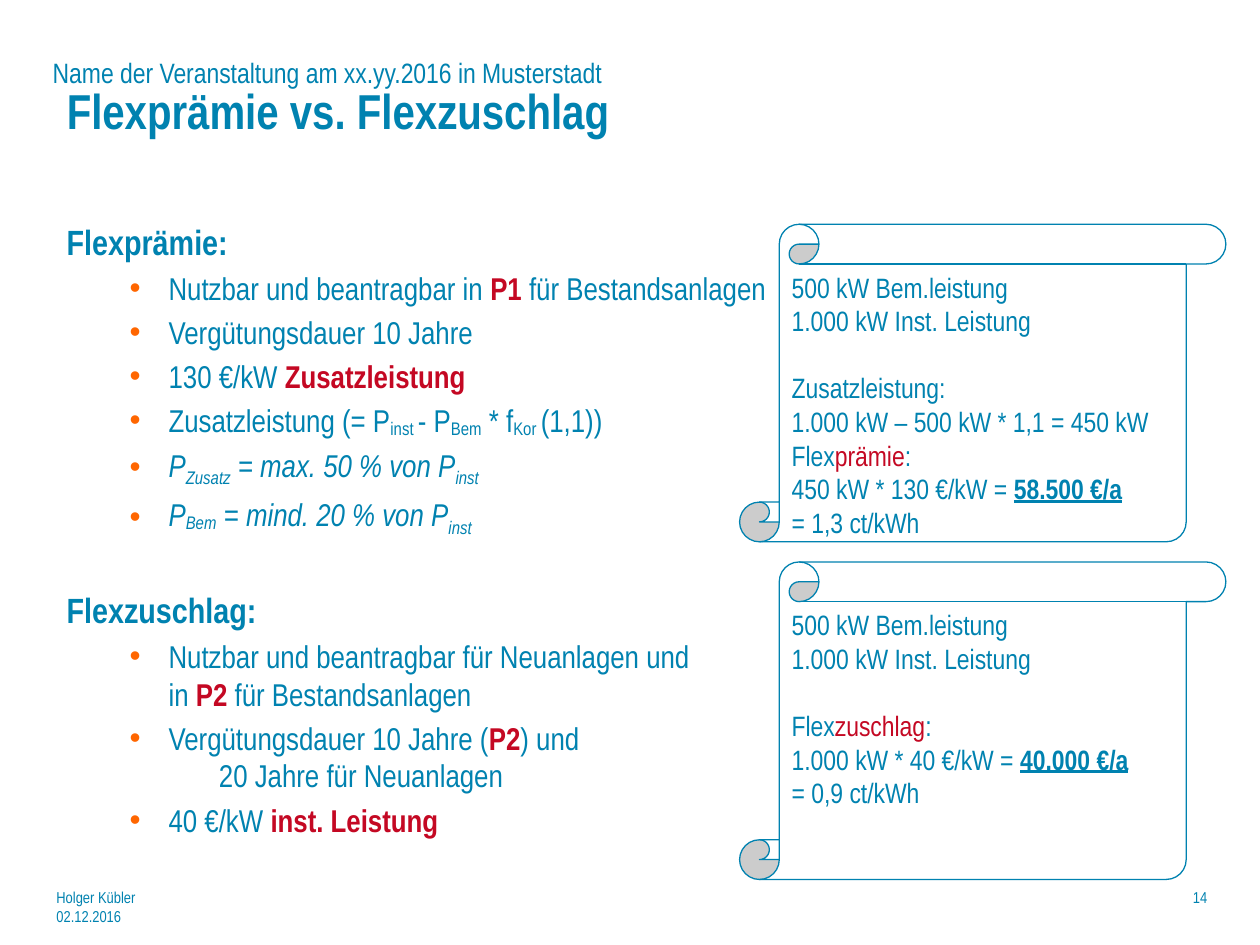
from dataclasses import dataclass

import pptx
import pptx.dml.color
import pptx.enum.shapes
import pptx.enum.text
import pptx.oxml
import pptx.oxml.ns
import pptx.util

BLUE = pptx.dml.color.RGBColor(0x00, 0x82, 0xB0)
RED = pptx.dml.color.RGBColor(0xC4, 0x08, 0x23)
ORANGE = pptx.dml.color.RGBColor(0xFF, 0x66, 0x00)
WHITE = pptx.dml.color.RGBColor(0xFF, 0xFF, 0xFF)
FONT = "Arial Narrow"
CELL = pptx.util.Inches(0.1)  # the slide is a grid of 100 columns by 75 rows
ANCHOR = pptx.enum.text.MSO_ANCHOR
ALIGN = pptx.enum.text.PP_ALIGN


@dataclass(frozen=True)
class Area:
    column: float
    row: float
    columns: float
    rows: float

    def lengths(self) -> list[int]:
        return [round(cells * CELL) for cells in (self.column, self.row, self.columns, self.rows)]


@dataclass(frozen=True)
class Run:
    text: str
    color: pptx.dml.color.RGBColor = BLUE
    bold: bool = False
    italic: bool = False
    underline: bool = False
    baseline: int = 0


@dataclass(frozen=True)
class Para:
    runs: tuple[Run, ...]
    size: float
    before: float = 0
    margin: float = 0
    bullet: bool = False


def red(text: str) -> Run:
    return Run(text, RED, bold=True)


def heading(text: str, before: float = 0) -> Para:
    return Para((Run(text, bold=True),), 20, before)


def item(*runs: Run) -> Para:
    return Para(runs, 18, 3.6, 8.1, bullet=True)


def scroll_line(*runs: Run, before: float = 0) -> Para:
    return Para(runs, 16, before)


def power(name: str, offset: int, share: str) -> Para:
    return item(Run("P", italic=True), Run(name, italic=True, baseline=offset),
                Run(f" = {share} % von P", italic=True), Run("inst", italic=True, baseline=-25))


def add_bullet(properties) -> None:
    properties.set("indent", str(round(-3.1 * CELL)))
    namespace = pptx.oxml.ns.nsdecls("a")
    for xml in (f'<a:buClr {namespace}><a:srgbClr val="{ORANGE}"/></a:buClr>',
                f'<a:buFont {namespace} typeface="Arial"/>',
                f'<a:buChar {namespace} char="•"/>'):
        properties.append(pptx.oxml.parse_xml(xml))


def add_run(paragraph, run: Run, size: float) -> None:
    for number, line in enumerate(run.text.split("\n")):
        if number:
            paragraph.add_line_break()
        piece = paragraph.add_run()
        piece.text = line
        font = piece.font
        font.name, font.size = FONT, pptx.util.Pt(size)
        font.bold, font.italic, font.underline = run.bold, run.italic, run.underline
        font.color.rgb = run.color
        if run.baseline:
            piece._r.get_or_add_rPr().set("baseline", str(run.baseline * 1000))


def write(shape, paras: list[Para], anchor=ANCHOR.TOP, align=ALIGN.LEFT) -> None:
    frame = shape.text_frame
    frame.word_wrap = True
    frame.auto_size = pptx.enum.text.MSO_AUTO_SIZE.NONE
    frame.vertical_anchor = anchor
    for number, para in enumerate(paras):
        paragraph = frame.add_paragraph() if number else frame.paragraphs[0]
        paragraph.alignment = align
        paragraph.space_before = pptx.util.Pt(para.before)
        properties = paragraph._p.get_or_add_pPr()
        properties.set("marL", str(round(para.margin * CELL)))
        if para.bullet:
            add_bullet(properties)
        for run in para.runs:
            add_run(paragraph, run, para.size)


def add_text(slide, area: Area, paras: list[Para], **layout) -> None:
    write(slide.shapes.add_textbox(*area.lengths()), paras, **layout)


def add_scroll(slide, row: float, paras: list[Para]) -> None:
    scroll = slide.shapes.add_shape(pptx.enum.shapes.MSO_SHAPE.VERTICAL_SCROLL,
                                    *Area(58.7, row, 38.6, 25.2).lengths())
    scroll.shadow.inherit = False
    scroll.fill.solid()
    scroll.fill.fore_color.rgb = WHITE
    scroll.line.color.rgb = BLUE
    scroll.line.width = pptx.util.Pt(0.75)
    write(scroll, paras)


BLANK_LINE = 19.2
COMPARISON = [
    heading("Flexprämie:"),
    item(Run("Nutzbar und beantragbar in "), red("P1"), Run(" für Bestandsanlagen")),
    item(Run("Vergütungsdauer 10 Jahre")),
    item(Run("130 €/kW "), red("Zusatzleistung")),
    item(Run("Zusatzleistung (= P"), Run("inst ", baseline=-10), Run("- P"),
         Run("Bem", baseline=-10), Run(" * f"), Run("Kor ", baseline=-10), Run("(1,1))")),
    power("Zusatz", -25, "max. 50"),
    power("Bem", -10, "mind. 20"),
    heading("Flexzuschlag:", before=29),
    item(Run("Nutzbar und beantragbar für Neuanlagen und \nin "), red("P2"),
         Run(" für Bestandsanlagen")),
    item(Run("Vergütungsdauer 10 Jahre ("), red("P2"), Run(") und")),
    Para((Run("20 Jahre für Neuanlagen"),), 18, margin=12.1),
    item(Run("40 €/kW "), red("inst. Leistung")),
]
PLANT = [scroll_line(Run("500 kW Bem.leistung")), scroll_line(Run("1.000 kW Inst. Leistung"))]
PREMIUM = PLANT + [
    scroll_line(Run("Zusatzleistung:\n1.000 kW – 500 kW * 1,1 = 450 kW"), before=BLANK_LINE),
    scroll_line(Run("Flex"), Run("prämie", RED), Run(":")),
    scroll_line(Run("450 kW * 130 €/kW = "), Run("58.500 €/a", bold=True, underline=True)),
    scroll_line(Run("= 1,3 ct/kWh")),
]
SURCHARGE = PLANT + [
    scroll_line(Run("Flex"), Run("zuschlag", RED), Run(":"), before=BLANK_LINE),
    scroll_line(Run("1.000 kW * 40 €/kW = "), Run("40.000 €/a", bold=True, underline=True)),
    scroll_line(Run("= 0,9 ct/kWh")),
]


def main() -> None:
    deck = pptx.Presentation()
    deck.slide_width, deck.slide_height = 100 * CELL, 75 * CELL
    slide = deck.slides.add_slide(deck.slide_layouts.get_by_name("Title Only"))

    title = slide.shapes.title
    title.left, title.top, title.width, title.height = Area(4.3, 2.5, 64.6, 12.5).lengths()
    write(title, [Para((Run("Flexprämie vs. Flexzuschlag", bold=True),), 28)], ANCHOR.MIDDLE)

    event = Run("Name der Veranstaltung am xx.yy.2016 in Musterstadt")
    add_text(slide, Area(3.2, 2.9, 93.5, 4.7), [Para((event,), 16)], anchor=ANCHOR.BOTTOM)
    add_text(slide, Area(4.3, 17, 91.7, 49.6), COMPARISON)
    add_scroll(slide, 17.8, PREMIUM)
    add_scroll(slide, 44.6, SURCHARGE)
    add_text(slide, Area(3.5, 70, 24.4, 5), [Para((Run("Holger Kübler\n02.12.2016"),), 9)])
    add_text(slide, Area(76, 70, 20.8, 5), [Para((Run("14"),), 9)], align=ALIGN.RIGHT)
    deck.save("out.pptx")


if __name__ == "__main__":
    main()
